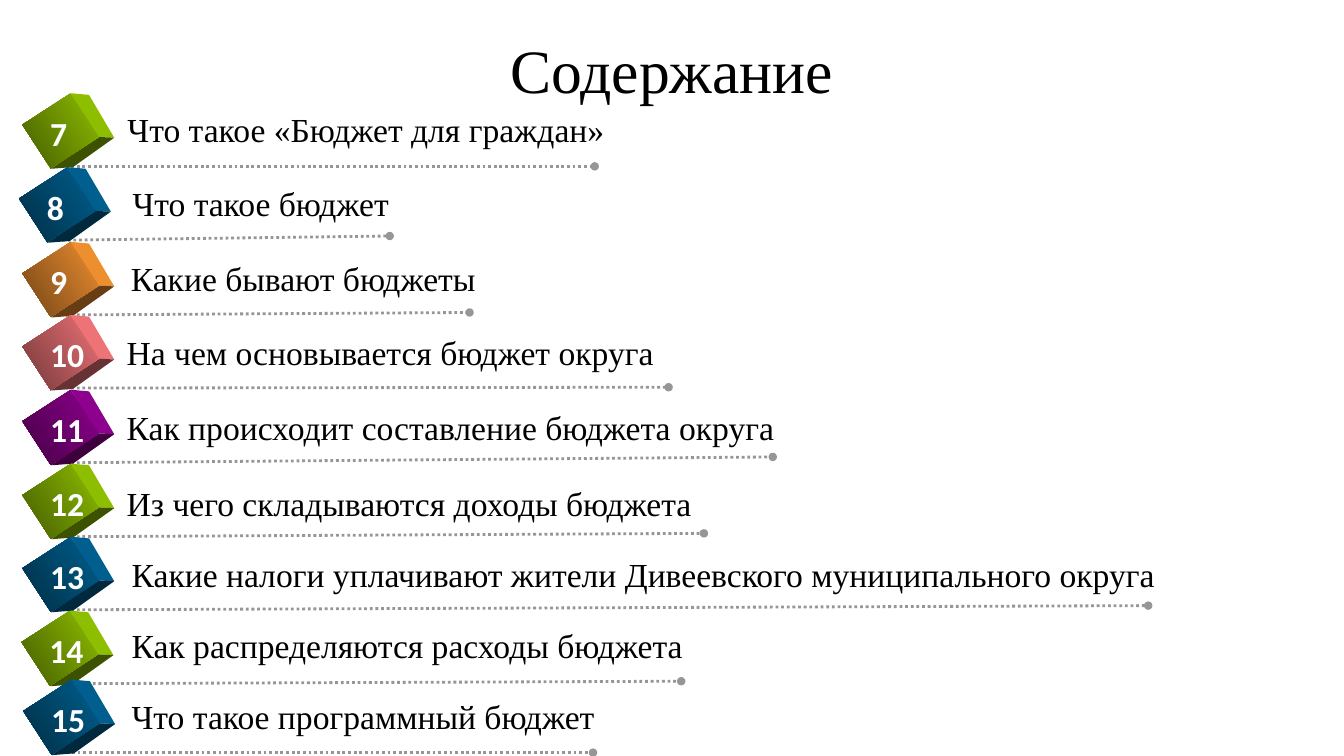
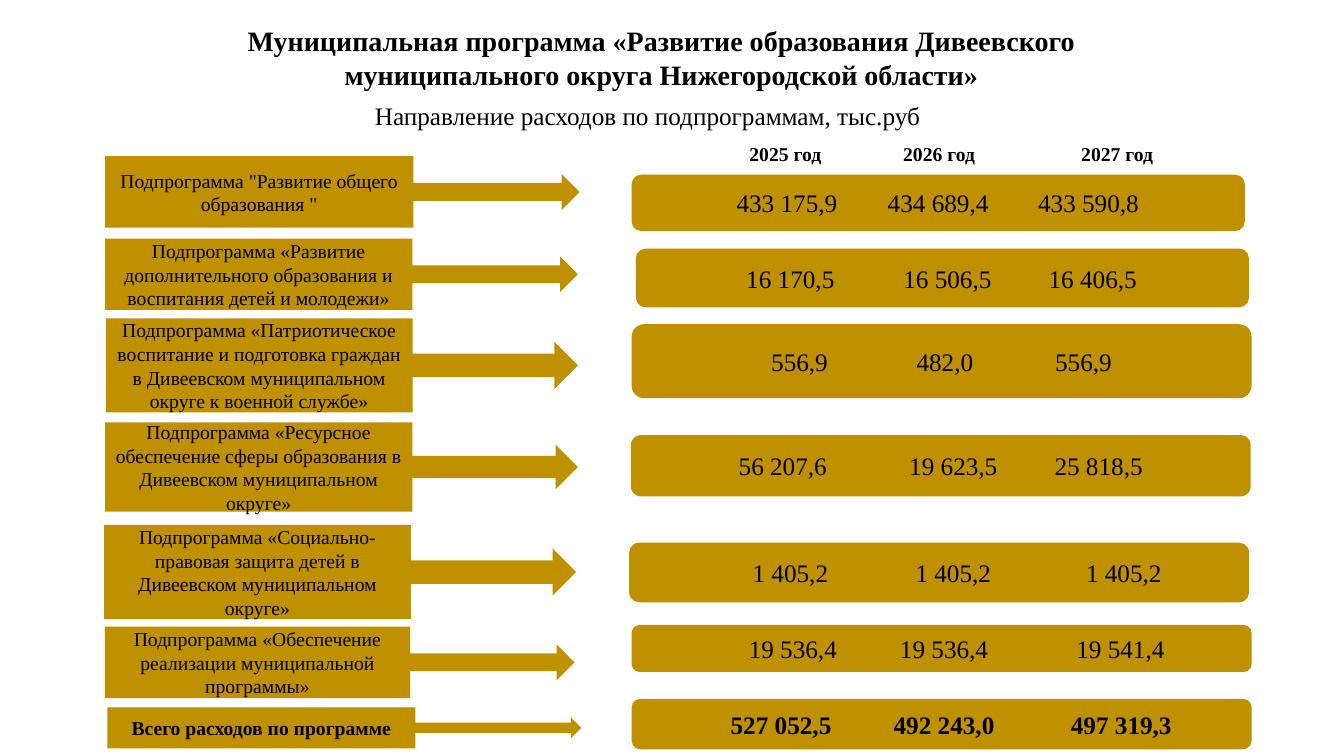
from lxml import etree
from pptx import Presentation
from pptx.dml.color import RGBColor
from pptx.enum.dml import MSO_LINE
from pptx.enum.shapes import MSO_CONNECTOR, MSO_SHAPE as Shape
from pptx.enum.text import MSO_ANCHOR as Anchor, MSO_AUTO_SIZE as Fit, PP_ALIGN as Align
from pptx.oxml.ns import qn
from pptx.util import Inches, Pt

# Grid of square cells
COLUMNS, ROWS = 160, 90
CELL = Inches(7.5) // ROWS

SERIF, SANS = "Times New Roman", "Calibri"
BLACK, WHITE, GREY, GOLD = "000000", "FFFFFF", "969696", "BF9000"
GREEN, BLUE, ORANGE, PINK, PURPLE = "99CC00", "006699", "FF9933", "FF7C80", "990099"


def cells(*counts):
    return [round(count * CELL) for count in counts]


def colour(code, shade=1.0):
    channels = RGBColor.from_string(code)
    return RGBColor(*(round(channel * shade) for channel in channels))


class Deck:
    def __init__(self):
        self.show = Presentation()
        self.show.slide_width, self.show.slide_height = cells(COLUMNS, ROWS)
        self.slide = None

    def new_slide(self):
        self.slide = self.show.slides.add_slide(self.show.slide_layouts[6])

    def put_words(self, shape, words, size, bold=False, font=SERIF, ink=BLACK,
                  align=Align.CENTER, anchor=Anchor.MIDDLE, wrap=True, tabs=()):
        frame = shape.text_frame
        frame.word_wrap, frame.vertical_anchor = wrap, anchor
        paragraph = frame.paragraphs[0]
        paragraph.text = words
        paragraph.alignment = align
        if tabs:
            stops = etree.SubElement(paragraph._p.get_or_add_pPr(), qn("a:tabLst"))
            for stop in cells(*tabs):
                etree.SubElement(stops, qn("a:tab"), pos=str(stop), algn="ctr")
        style = paragraph.font
        style.name, style.size, style.bold = font, Pt(size), bold
        style.color.rgb = colour(ink)
        return paragraph

    def text(self, box, words, size, **style):
        shape = self.slide.shapes.add_textbox(*cells(*box))
        return shape, self.put_words(shape, words, size, **style)

    def label(self, box, words, **style):
        """One-line text that keeps its box as wide as the words."""
        shape, _ = self.text(box, words, 24, align=Align.LEFT,
                             anchor=Anchor.TOP, wrap=False, **style)
        shape.text_frame.auto_size = Fit.SHAPE_TO_FIT_TEXT

    def panel(self, kind, box, fill=GOLD):
        shape = self.slide.shapes.add_shape(kind, *cells(*box))
        shape.shadow.inherit = False
        shape.line.fill.background()
        if fill:
            shape.fill.solid()
            shape.fill.fore_color.rgb = colour(fill)
        else:
            shape.fill.background()
        return shape

    def face(self, points, hue, shade):
        start, *others = [cells(*point) for point in points]
        builder = self.slide.shapes.build_freeform(*start)
        builder.add_line_segments(others)
        shape = builder.convert_to_shape()
        shape.shadow.inherit = False
        shape.line.fill.background()
        shape.fill.solid()
        shape.fill.fore_color.rgb = colour(hue, shade)

    def cube(self, left, top, hue):
        upper, inner, lower = (4.3, -1.1), (7.5, 4.1), (2, 7.9)
        outer = (9.5, 4.2)
        for corners, shade in (((upper, (6.5, -0.9), outer, inner), 0.93),
                               ((inner, outer, (4.6, 7.7), lower), 0.4)):
            self.face([(left + x, top + y) for x, y in corners], hue, shade)
        front = self.panel(Shape.RECTANGLE, (left, top, 6.2, 6.8))
        front.rotation = 57
        front.fill.gradient()
        front.fill.gradient_angle = 270
        for stop, shade in zip(front.fill.gradient_stops, (0.93, 0.45)):
            stop.color.rgb = colour(hue, shade)

    def dotted_line(self, start, end):
        line = self.slide.shapes.add_connector(
            MSO_CONNECTOR.STRAIGHT, *cells(*start, *end))
        line.line.color.rgb = colour(GREY)
        line.line.width = Pt(2)
        line.line.dash_style = MSO_LINE.ROUND_DOT
        etree.SubElement(line.line._get_or_add_ln(), qn("a:tailEnd"), type="oval")
        etree.SubElement(line._element.spPr, qn("a:effectLst"))

    def figures(self, box, values, centres, bold):
        bar = self.panel(Shape.ROUNDED_RECTANGLE, box)
        bar.text_frame.margin_left = 0
        left, height = box[0], box[3]
        text_left = left + 0.05 * height  # rounded corners push the text in
        self.put_words(bar, "".join("\t" + value for value in values), 18, bold=bold,
                       align=Align.LEFT, tabs=[centre - text_left for centre in centres])


# number, hue, cube left and top, label left, top and width, line end, words
CONTENTS = [
    (7, GREEN, 4.1, 12.2, 14, 12.4, 59.8, (70.8, 19.8), "Что такое «Бюджет для граждан»"),
    (8, BLUE, 3.7, 21, 14.6, 21.2, 33.1, (46.4, 28.1), "Что такое бюджет"),
    (9, ORANGE, 4.1, 29.9, 14.4, 30.1, 43.8, (55.9, 37.2), "Какие бывают бюджеты"),
    (10, PINK, 4.1, 38.6, 13.9, 38.9, 65.6, (79.6, 46.1),
     "На чем основывается бюджет округа"),
    (11, PURPLE, 4.1, 47.5, 13.9, 47.8, 80, (92, 54.4),
     "Как происходит составление бюджета округа"),
    (12, GREEN, 4.1, 56.3, 13.9, 56.9, 70.6, (83.8, 63.5),
     "Из чего складываются доходы бюджета"),
    (13, BLUE, 4.1, 65, 14.5, 65.4, 125, (136.7, 72.1),
     "Какие налоги уплачивают жители Дивеевского муниципального округа"),
    (14, GREEN, 4, 73.8, 14.5, 73.8, 69.1, (81.1, 81.1),
     "Как распределяются расходы бюджета"),
    (15, BLUE, 4.2, 82, 14.5, 82.3, 58.3, (70.6, 89.6), "Что такое программный бюджет"),
]

# callout box, words, bar box, values, centres of the values
PROGRAMMES = [
    ((12.5, 18.6, 56.5, 8.5), 'Подпрограмма "Развитие общего образования "',
     (75.2, 20.8, 73, 6.7), ("433 175,9", "434 689,4", "433 590,8"), (93.7, 111.7, 129.6)),
    ((12.5, 28.4, 56.3, 8.5),
     "Подпрограмма «Развитие дополнительного образования и воспитания детей и молодежи»",
     (75.7, 29.6, 73, 7), ("16 170,5", "16 506,5", "16 406,5"), (94.1, 112.8, 130.1)),
    ((12.6, 37.9, 56.2, 11.2),
     "Подпрограмма «Патриотическое воспитание и подготовка граждан "
     "в Дивеевском муниципальном округе к военной службе»",
     (75.2, 38.6, 73.8, 8.8), ("556,9", "482,0", "556,9"), (95.2, 112.5, 129)),
    ((12.5, 50.3, 56.3, 10.6),
     "Подпрограмма «Ресурсное обеспечение сферы образования "
     "в Дивеевском муниципальном округе»",
     (75.1, 51.8, 73.8, 7.3), ("56 207,6", "19 623,5", "25 818,5"), (93.2, 113.5, 130.8)),
    ((12.4, 62.5, 56.2, 11.2),
     "Подпрограмма «Социально-правовая защита детей в Дивеевском муниципальном округе»",
     (74.9, 64.6, 73.8, 7.1), ("1 405,2", "1 405,2", "1 405,2"), (94.1, 113.5, 133.8)),
    ((12.5, 74.6, 55.9, 8.5),
     "Подпрограмма «Обеспечение реализации муниципальной программы»",
     (75.2, 74.4, 73.8, 5.6), ("19 536,4", "19 536,4", "19 541,4"), (94.4, 112.4, 133.4)),
    ((12.8, 84.2, 56.4, 4.9), "Всего расходов по программе",
     (75.2, 83.2, 73.8, 6), ("527 052,5", "492 243,0", "497 319,3"), (93, 112.4, 133.5)),
]

YEARS = {"2025 год": 87.8, "2026 год": 106.1, "2027 год": 127.3}


def contents_slide(deck):
    deck.new_slide()
    _, heading = deck.text((11, 0, 138, 17.4), "Содержание", 44)
    heading.line_spacing = 0.9
    for number, hue, left, top, label_left, label_top, width, end, words in CONTENTS:
        deck.dotted_line((left + 3.7, top + 7.6), end)
        deck.cube(left, top, hue)
        deck.label((label_left, label_top, width, 6.1), words)
        deck.label((left + 0.7, top + 0.6, 4.4 if number < 10 else 6.5, 6.1),
                   str(number), font=SANS, ink=WHITE, bold=True)


def programme_slide(deck):
    deck.new_slide()
    # Headings
    title = deck.panel(Shape.FLOWCHART_ALTERNATE_PROCESS, (20, 1.6, 117.5, 10.4), fill=None)
    deck.put_words(title, "Муниципальная программа «Развитие образования Дивеевского "
                          "муниципального округа Нижегородской области»", 20, bold=True)
    subtitle = deck.panel(Shape.ROUNDED_RECTANGLE, (16.7, 11.4, 120.8, 4.8), fill=None)
    deck.put_words(subtitle, "Направление расходов по подпрограммам, тыс.руб", 18)

    # Subprogrammes and their spending; the last row is the total
    for callout_box, words, bar_box, values, centres in PROGRAMMES:
        is_total = words.startswith("Всего")
        callout = deck.panel(Shape.RIGHT_ARROW_CALLOUT, callout_box)
        deck.put_words(callout, words, 14, bold=is_total)
        deck.figures(bar_box, values, centres, is_total)

    # Years above the figures
    for year, left in YEARS.items():
        heading, _ = deck.text((left, 17.2, 11.4, 2.3), year, 14, bold=True)
        frame = heading.text_frame
        frame.margin_left = frame.margin_right = frame.margin_top = frame.margin_bottom = 0


def main():
    deck = Deck()
    contents_slide(deck)
    programme_slide(deck)
    deck.show.save("out.pptx")


if __name__ == "__main__":
    main()
